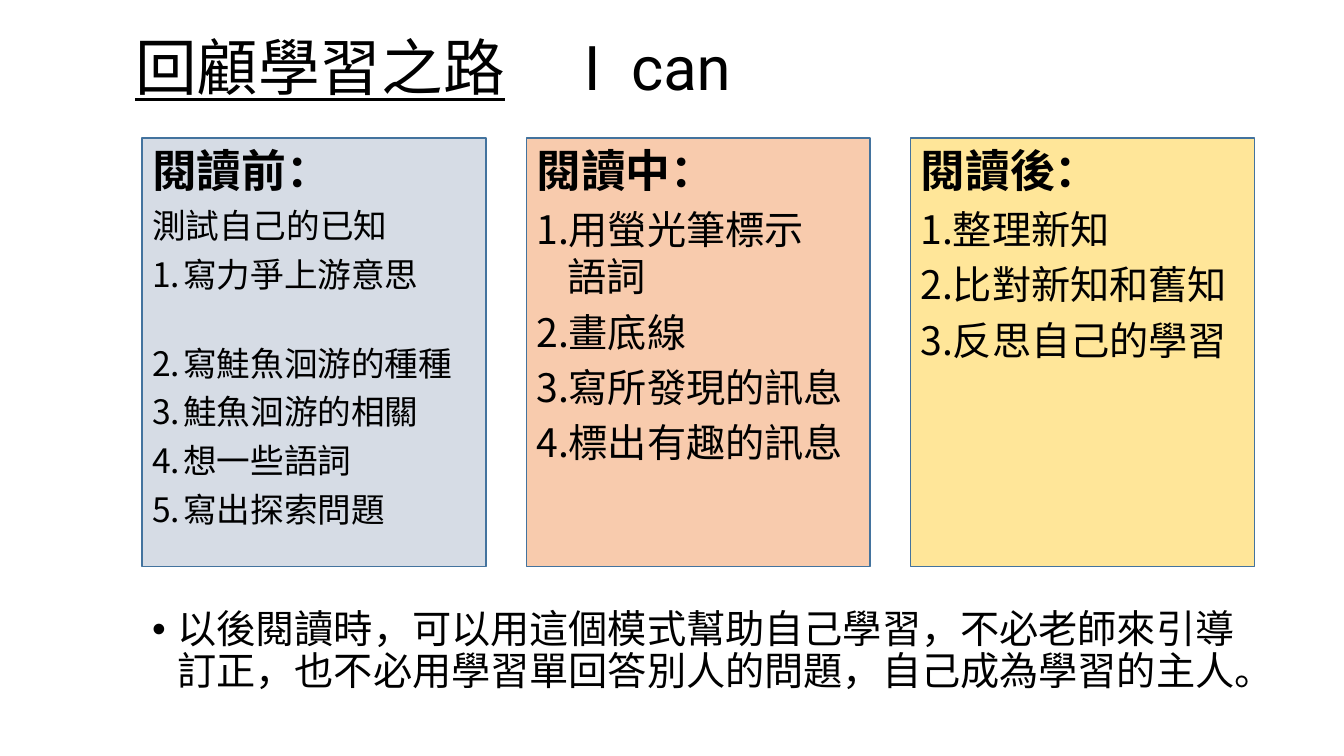
from lxml import etree
from pptx import Presentation
from pptx.dml.color import RGBColor
from pptx.enum import shapes, text
from pptx.oxml.ns import qn
from pptx.util import Inches, Pt

CJK, LATIN = "Noto Sans CJK SC", "Roboto"
BLACK = RGBColor(0, 0, 0)
BORDER = RGBColor(0x43, 0x73, 0x9E)
BLUE = RGBColor(0xD6, 0xDC, 0xE5)
ORANGE = RGBColor(0xF8, 0xCB, 0xAD)
YELLOW = RGBColor(0xFF, 0xE6, 0x99)

TITLE = ("回顧學習之路", "I  can")
CARDS = [
    {"head": "閱讀前：", "fill": BLUE, "size": 24, "intro": "測試自己的已知",
     "steps": ["寫力爭上游意思", "寫鮭魚洄游的種種", "鮭魚洄游的相關", "想一些語詞", "寫出探索問題"],
     "first_gap": 34.5},
    {"head": "閱讀中：", "fill": ORANGE, "size": 28,
     "steps": ["用螢光筆標示\n語詞", "畫底線", "寫所發現的訊息", "標出有趣的訊息"]},
    {"head": "閱讀後：", "fill": YELLOW, "size": 28,
     "steps": ["整理新知", "比對新知和舊知", "反思自己的學習"]},
]
CLOSING = "以後閱讀時，可以用這個模式幫助自己學習，不必老師來引導訂正，也不必用學習單回答別人的問題，自己成為學習的主人。"

CARD_LEFT, CARD_TOP, CARD_W, CARD_H, CARD_PITCH = 1.41, 1.37, 3.41, 4.25, 3.81


def style_run(r, size, font=CJK, **formats):
    for name, value in {"name": font, "size": Pt(size), **formats}.items():
        setattr(r.font, name, value)
    r.font.color.rgb = BLACK
    ea = etree.SubElement(r._r.get_or_add_rPr(), qn("a:ea"))
    ea.set("typeface", CJK)


def write(p, content, size, bold=False, **formats):
    p.text = content
    for name, value in {"alignment": text.PP_ALIGN.LEFT, **formats}.items():
        setattr(p, name, value)
    for r in p.runs:
        style_run(r, size, bold=bold)


def add_marker(p, indent, tag, **attributes):
    """Give a paragraph a hanging indent and a bullet or number."""
    pPr = p._p.get_or_add_pPr()
    pPr.set("marL", str(Inches(indent)))
    pPr.set("indent", str(-Inches(indent)))
    font = etree.SubElement(pPr, qn("a:buFont"))
    font.set("typeface", "Arial" if tag == "a:buChar" else "+mj-lt")
    marker = etree.SubElement(pPr, qn(tag))
    for name, value in attributes.items():
        marker.set(name, value)


def add_title(slide):
    title = slide.shapes.title
    title.left, title.top, title.width, title.height = map(Inches, (1.24, 0.3, 10.36, 0.79))
    tf = title.text_frame
    tf.auto_size = text.MSO_AUTO_SIZE.NONE
    tf.vertical_anchor = text.MSO_ANCHOR.MIDDLE
    p = tf.paragraphs[0]
    p.alignment, p.line_spacing = text.PP_ALIGN.LEFT, 0.9
    for content, font, underline in ((TITLE[0], CJK, True), ("\t", CJK, False),
                                     (TITLE[1], LATIN, False)):
        r = p.add_run()
        r.text = content
        style_run(r, 44, font, underline=underline)
    tabs = etree.SubElement(p._p.get_or_add_pPr(), qn("a:tabLst"))
    tab = etree.SubElement(tabs, qn("a:tab"))
    tab.set("pos", str(Inches(4.45)))
    tab.set("algn", "l")


def add_card(slide, column, card):
    sp = slide.shapes.add_shape(
        shapes.MSO_SHAPE.RECTANGLE, Inches(CARD_LEFT + column * CARD_PITCH),
        Inches(CARD_TOP), Inches(CARD_W), Inches(CARD_H))
    sp.shadow.inherit = False
    sp.fill.solid()
    sp.fill.fore_color.rgb = card["fill"]
    sp.line.color.rgb = BORDER
    sp.line.width = Pt(1)
    tf = sp.text_frame
    tf.word_wrap = True
    tf.vertical_anchor = text.MSO_ANCHOR.TOP
    write(tf.paragraphs[0], card["head"], 32, bold=True, space_after=Pt(6))
    if "intro" in card:
        write(tf.add_paragraph(), card["intro"], card["size"], space_after=Pt(6))
    for i, step in enumerate(card["steps"]):
        gap = card.get("first_gap", 6) if i == 0 else 6
        p = tf.add_paragraph()
        write(p, step, card["size"], space_after=Pt(gap))
        add_marker(p, 0.31, "a:buAutoNum", type="arabicPeriod")


def add_closing(slide):
    box = slide.shapes.add_textbox(*map(Inches, (1.41, 6, 11.29, 1.03)))
    tf = box.text_frame
    tf.word_wrap = True
    p = tf.paragraphs[0]
    write(p, CLOSING, 28, line_spacing=0.9, space_before=Pt(10))
    add_marker(p, 0.25, "a:buChar", char="•")


def main():
    prs = Presentation()
    prs.slide_width, prs.slide_height = Inches(13.33), Inches(7.5)
    slide = prs.slides.add_slide(prs.slide_layouts[5])
    add_title(slide)
    for column, card in enumerate(CARDS):
        add_card(slide, column, card)
    add_closing(slide)
    prs.save("out.pptx")


if __name__ == "__main__":
    main()
